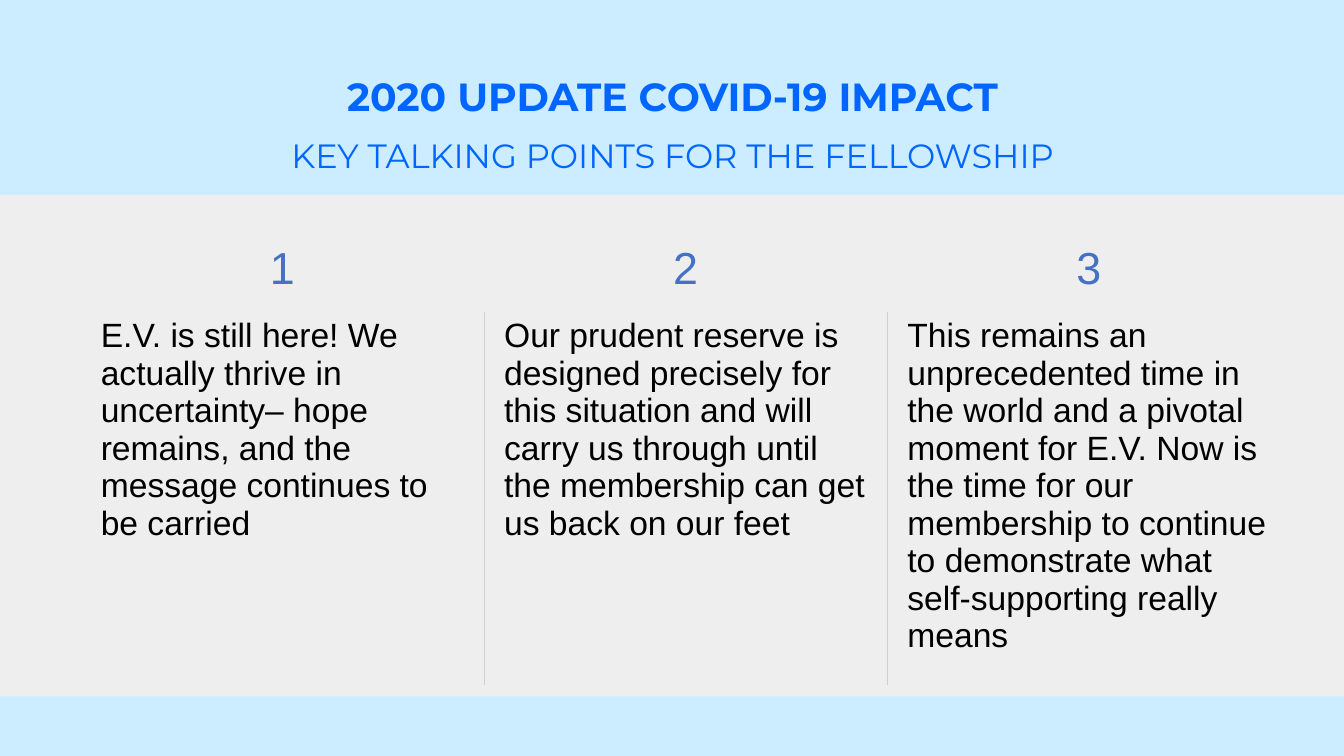
"""Build a slide with three numbered talking points in a table."""
import pptx
import pptx.dml.color
import pptx.enum.shapes
import pptx.enum.text
import pptx.oxml
import pptx.oxml.ns
import pptx.util

Inches = pptx.util.Inches
ALIGN = pptx.enum.text.PP_ALIGN
ANCHOR = pptx.enum.text.MSO_ANCHOR

TITLE = "2020 UPDATE COVID-19 IMPACT"
SUBTITLE = "KEY TALKING POINTS FOR THE FELLOWSHIP"
TALKING_POINTS = [
    "E.V. is still here! We actually thrive in uncertainty– hope remains, "
    "and the message continues to be carried",
    "Our prudent reserve is designed precisely for this situation and will "
    "carry us through until the membership can get us back on our feet",
    "This remains an unprecedented time in the world and a pivotal moment for "
    "E.V. Now is the time for our membership to continue to demonstrate what "
    "self-supporting really means",
]
COLORS = {
    "background": "CCECFF",
    "heading": "0066FF",
    "band": "EEEEEE",
    "number": "4472C4",
    "text": "000000",
    "divider": "CFCFCF",
}
FORMATS = {
    "title": {"name": "Montserrat", "size": 28, "bold": True, "color": "heading", "align": ALIGN.CENTER},
    "subtitle": {"name": "Montserrat", "size": 24, "bold": False, "color": "heading", "align": ALIGN.CENTER},
    "number": {"name": "Arial", "size": 32, "bold": False, "color": "number", "align": ALIGN.CENTER},
    "point": {"name": "Arial", "size": 24, "bold": False, "color": "text", "align": ALIGN.LEFT},
}
CELL_MARGINS = {"margin_left": 0.2, "margin_top": 0.05, "margin_right": 0.2, "margin_bottom": 0.05}
COLUMN_WIDTH = 4
ROW_HEIGHTS = [0.73, 3.7]
NO_STYLE_NO_GRID = "{2D5ABB26-0587-4C30-8999-92F81FD0307C}"


def rgb(name):
    """Return the named colour."""
    return pptx.dml.color.RGBColor.from_string(COLORS[name])


def write(text_frame, text, format_name):
    """Put one formatted paragraph in a text frame."""
    values = FORMATS[format_name]
    text_frame.word_wrap = True
    paragraph = text_frame.paragraphs[0]
    paragraph.alignment = values["align"]
    run = paragraph.add_run()
    run.text = text
    settings = {"name": values["name"], "size": pptx.util.Pt(values["size"]), "bold": values["bold"]}
    for attribute, value in settings.items():
        setattr(run.font, attribute, value)
    run.font.color.rgb = rgb(values["color"])


def add_dividers(cell, sides):
    """Draw thin lines on the given sides of a cell."""
    properties = cell._tc.get_or_add_tcPr()
    for position, side in enumerate(sides):
        line = pptx.oxml.parse_xml(
            f'<a:ln{side} {pptx.oxml.ns.nsdecls("a")} w="{pptx.util.Pt(0.75)}"><a:solidFill>'
            f'<a:srgbClr val="{COLORS["divider"]}"/></a:solidFill></a:ln{side}>'
        )
        properties.insert(position, line)


def add_points_table(slide):
    """Add the table of numbers above talking points."""
    count = len(TALKING_POINTS)
    frame = slide.shapes.add_table(
        len(ROW_HEIGHTS), count, Inches(0.8), Inches(2.37),
        Inches(COLUMN_WIDTH * count), Inches(sum(ROW_HEIGHTS)),
    )
    table = frame.table
    table.first_row = False
    table.horz_banding = False
    table._tbl.tblPr.find(pptx.oxml.ns.qn("a:tableStyleId")).text = NO_STYLE_NO_GRID
    for row, height in zip(table.rows, ROW_HEIGHTS):
        row.height = Inches(height)
    for index, point in enumerate(TALKING_POINTS):
        table.columns[index].width = Inches(COLUMN_WIDTH)
        for row, (text, format_name) in enumerate([(str(index + 1), "number"), (point, "point")]):
            cell = table.cell(row, index)
            cell.fill.background()
            for attribute, value in CELL_MARGINS.items():
                setattr(cell, attribute, Inches(value))
            write(cell.text_frame, text, format_name)
        sides = (["L"] if index > 0 else []) + (["R"] if index < count - 1 else [])
        add_dividers(table.cell(1, index), sides)


def main():
    """Build and save the presentation."""
    presentation = pptx.Presentation()
    presentation.slide_width = Inches(13.33)
    presentation.slide_height = Inches(7.5)
    slide = presentation.slides.add_slide(presentation.slide_layouts[5])
    slide.background.fill.solid()
    slide.background.fill.fore_color.rgb = rgb("background")

    title = slide.shapes.title
    title_box = {"left": 0.67, "top": 0.33, "width": 12, "height": 1.25}
    for attribute, value in title_box.items():
        setattr(title, attribute, Inches(value))
    title.text_frame.auto_size = pptx.enum.text.MSO_AUTO_SIZE.NONE
    title.text_frame.vertical_anchor = ANCHOR.MIDDLE
    write(title.text_frame, TITLE, "title")

    subtitle = slide.shapes.add_textbox(Inches(1.53), Inches(1.29), Inches(10.28), Inches(0.5))
    write(subtitle.text_frame, SUBTITLE, "subtitle")
    subtitle.text_frame.auto_size = pptx.enum.text.MSO_AUTO_SIZE.SHAPE_TO_FIT_TEXT

    band = slide.shapes.add_shape(
        pptx.enum.shapes.MSO_SHAPE.RECTANGLE, 0, Inches(1.93), presentation.slide_width, Inches(4.98)
    )
    band.shadow.inherit = False
    band.fill.solid()
    band.fill.fore_color.rgb = rgb("band")
    band.line.fill.background()

    add_points_table(slide)
    presentation.save("out.pptx")


if __name__ == "__main__":
    main()
